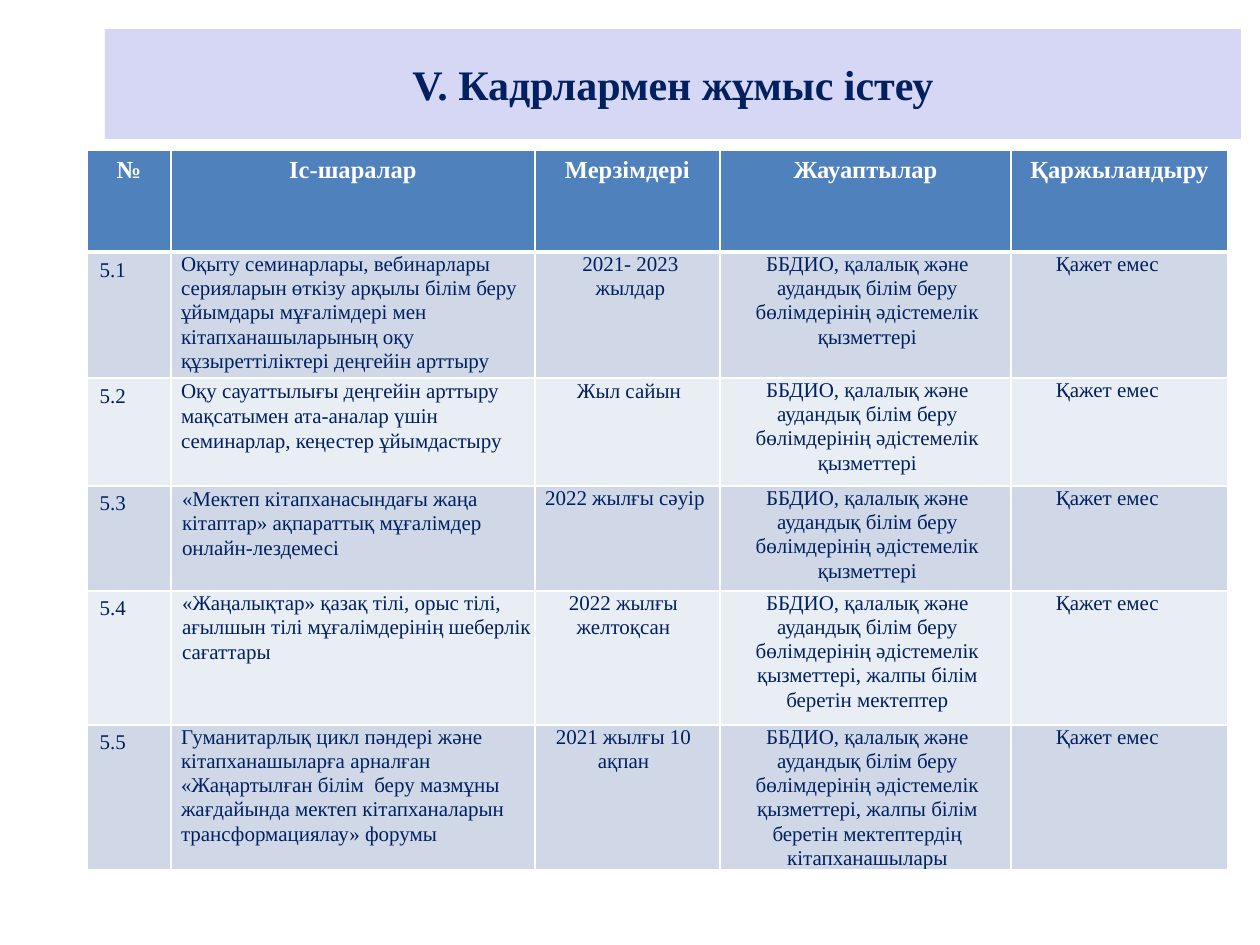
from lxml import etree
from pptx import Presentation
from pptx.dml.color import RGBColor
from pptx.enum.shapes import MSO_SHAPE
from pptx.enum.text import MSO_ANCHOR, PP_ALIGN
from pptx.oxml.ns import qn
from pptx.util import Emu, Pt

RECT = MSO_SHAPE.RECTANGLE
MIDDLE = MSO_ANCHOR.MIDDLE
LEFT, CENTER = PP_ALIGN.LEFT, PP_ALIGN.CENTER

FONT = "Times New Roman"
COLORS = {
    "banner": "D6D6F5", "navy": "002060", "white": "FFFFFF",
    "head": "4F81BD", "odd": "D0D8E8", "even": "E9EDF4",
}
WIDTHS = [84, 364, 185, 291, 217]
HEIGHTS = [102, 126, 108, 105, 134, 145]
HEADS = ["№", "Іс-шаралар", "Мерзімдері", "Жауаптылар", "Қаржыландыру"]
STAFF = "ББДИО, қалалық және аудандық білім беру бөлімдерінің әдістемелік қызметтері"
FUNDS = "Қажет емес"

# Each event and date: text, left margin, line spacing; dates add a right margin
ROWS = [
    (("Оқыту семинарлары, вебинарлары серияларын өткізу арқылы білім беру "
      "ұйымдары мұғалімдері мен кітапханашыларының оқу құзыреттіліктері "
      "деңгейін арттыру", 10, 13.8),
     ("2021- 2023 жылдар", 42, 13.8, 36), ""),
    (("Оқу сауаттылығы деңгейін арттыру мақсатымен ата-аналар үшін "
      "семинарлар, кеңестер ұйымдастыру", 10, 14.4),
     ("Жыл сайын", 11, 14.1, 8), ""),
    (("«Мектеп кітапханасындағы жаңа кітаптар» ақпараттық мұғалімдер "
      "онлайн-лездемесі", 11, 14.1),
     ("2022 жылғы сәуір", 0, 13.7, 5), ""),
    (("«Жаңалықтар» қазақ тілі, орыс тілі, ағылшын тілі мұғалімдерінің "
      "шеберлік сағаттары", 11, 13.9),
     ("2022 жылғы желтоқсан", 0, 13.9, 8),
     ", жалпы білім беретін мектептер"),
    (("Гуманитарлық цикл пәндері және кітапханашыларға арналған "
      "«Жаңартылған білім  беру мазмұны жағдайында мектеп кітапханаларын "
      "трансформациялау» форумы", 10, 13.8),
     ("2021 жылғы 10 ақпан", 0, 13.8, 8),
     ", жалпы білім беретін мектептердің кітапханашылары"),
]


def px(n):
    return Emu(n * 914400 // 126)


def rgb(name):
    return RGBColor.from_string(COLORS[name])


def write(frame, text, size, color, bold=False, align=LEFT):
    frame.text = text
    para = frame.paragraphs[0]
    para.alignment = align
    font = para.runs[0].font
    font.name, font.size, font.bold = FONT, Pt(size), bold
    font.color.rgb = rgb(color)
    return para


def add_title(slide):
    box = slide.shapes.add_shape(RECT, px(105), px(29), px(1136), px(110))
    box.shadow.inherit = False
    box.fill.solid()
    box.fill.fore_color.rgb = rgb("banner")
    box.line.fill.background()
    box.text_frame.vertical_anchor = MIDDLE
    write(box.text_frame, "V. Кадрлармен жұмыс істеу", 24, "navy", True, CENTER)


def paint(cell, fill, top, bottom):
    """Fill a cell and give it white borders, top and bottom in points."""
    cell.fill.solid()
    cell.fill.fore_color.rgb = rgb(fill)
    props = cell._tc.get_or_add_tcPr()
    sides = [("L", 1), ("R", 1), ("T", top), ("B", bottom)]
    for spot, (side, width) in enumerate(sides):
        line = etree.Element(qn("a:ln" + side), w=str(Pt(width)))
        solid = etree.SubElement(line, qn("a:solidFill"))
        etree.SubElement(solid, qn("a:srgbClr"), val=COLORS["white"])
        props.insert(spot, line)


def fill_body(cell, text, left, lead, right=0, align=LEFT):
    cell.margin_left = cell.margin_right = 0
    cell.margin_top = cell.margin_bottom = 0
    para = write(cell.text_frame, text, 12, "navy", align=align)
    para.line_spacing = Pt(lead)
    props = para._p.get_or_add_pPr()
    props.set("marL", str(px(left)))
    props.set("marR", str(px(right)))
    props.set("indent", "0")


def add_plan(slide):
    frame = slide.shapes.add_table(len(HEIGHTS), len(WIDTHS), px(87), px(150),
                                   px(sum(WIDTHS)), px(sum(HEIGHTS)))
    table = frame.table
    for col, width in zip(table.columns, WIDTHS):
        col.width = px(width)
    for row, height in zip(table.rows, HEIGHTS):
        row.height = px(height)

    for cell, text in zip(table.rows[0].cells, HEADS):
        paint(cell, "head", 1, 3)
        para = write(cell.text_frame, text, 14, "white", True, CENTER)
        para.line_spacing = 1.02

    for n, (event, date, extra) in enumerate(ROWS, 1):
        cells = list(table.rows[n].cells)
        for cell in cells:
            paint(cell, "odd" if n % 2 else "even", 3 if n == 1 else 1, 1)
        write(cells[0].text_frame, f"5.{n}", 12, "navy")
        fill_body(cells[1], *event)
        fill_body(cells[2], *date, align=CENTER)
        fill_body(cells[3], STAFF + extra, 34, 13.8, 30, CENTER)
        fill_body(cells[4], FUNDS, 45, 13.8)


def main():
    deck = Presentation()
    deck.slide_width, deck.slide_height = px(1260), px(945)
    slide = deck.slides.add_slide(deck.slide_layouts[6])
    add_title(slide)
    add_plan(slide)
    deck.save("out.pptx")


if __name__ == "__main__":
    main()
